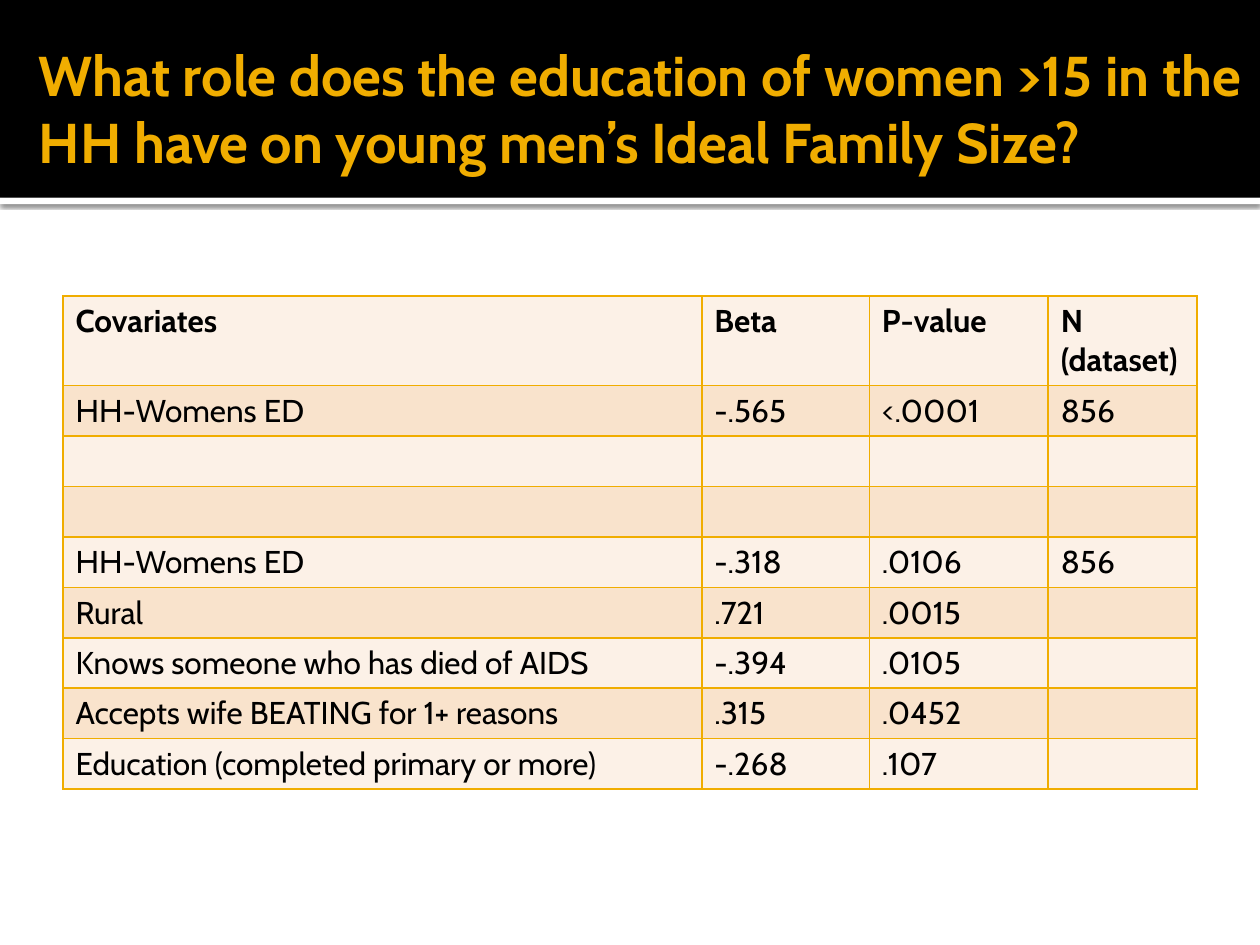
from typing import NamedTuple

from lxml import etree
from pptx import Presentation
from pptx.dml.color import RGBColor
from pptx.enum.shapes import MSO_SHAPE
from pptx.enum.text import MSO_ANCHOR
from pptx.oxml.ns import qn
from pptx.util import Inches, Pt

RECTANGLE = MSO_SHAPE.RECTANGLE
MIDDLE = MSO_ANCHOR.MIDDLE

BLACK = RGBColor(0x00, 0x00, 0x00)
WHITE = RGBColor(0xFF, 0xFF, 0xFF)
GOLD = RGBColor(0xF0, 0xAD, 0x00)
LIGHT_BAND = RGBColor(0xFC, 0xF1, 0xE7)
DARK_BAND = RGBColor(0xF9, 0xE3, 0xCC)

FONT = "Cabin"
TITLE = "What role does the education of women >15 in the HH have on young men’s Ideal Family Size?"
COLUMN_WIDTHS = (5.07, 1.33, 1.42, 1.18)
HEADER_HEIGHT = 0.71
ROW_HEIGHT = 0.4


class Covariate(NamedTuple):
    name: str = ""
    beta: str = ""
    p_value: str = ""
    count: str = ""


ROWS = (
    Covariate("Covariates", "Beta", "P-value", "N (dataset)"),
    Covariate("HH-Womens ED", "-.565", "<.0001", "856"),
    Covariate(),
    Covariate(),
    Covariate("HH-Womens ED", "-.318", ".0106", "856"),
    Covariate("Rural", ".721", ".0015"),
    Covariate("Knows someone who has died of AIDS", "-.394", ".0105"),
    Covariate("Accepts wife BEATING for 1+ reasons", ".315", ".0452"),
    Covariate("Education (completed primary or more)", "-.268", ".107"),
)


def add_band(slide, top: float, height: float, color: RGBColor):
    shape = slide.shapes.add_shape(RECTANGLE, 0, Inches(top), Inches(10), Inches(height))
    shape.shadow.inherit = False
    shape.fill.solid()
    shape.fill.fore_color.rgb = color
    shape.line.fill.background()
    return shape


def add_shadow(shape) -> None:
    """Cast a soft black shadow straight down."""
    effects = shape._element.spPr.find(qn("a:effectLst"))
    shadow = etree.SubElement(
        effects, qn("a:outerShdw"), blurRad=str(Pt(2.5)), dist=str(Pt(0.8)),
        dir="5400000", algn="t", rotWithShape="0")
    color = etree.SubElement(shadow, qn("a:srgbClr"), val=str(BLACK))
    etree.SubElement(color, qn("a:alpha"), val="60000")


def format_text(text_frame, size: float, color: RGBColor, bold: bool) -> None:
    for paragraph in text_frame.paragraphs:
        for run in paragraph.runs:
            run.font.name = FONT
            run.font.size = Pt(size)
            run.font.color.rgb = color
            run.font.bold = bold


def add_title(slide) -> None:
    box = slide.shapes.add_textbox(Inches(0.21), Inches(0.17), Inches(9.79), Inches(1.37))
    text_frame = box.text_frame
    text_frame.word_wrap = True
    text_frame.vertical_anchor = MIDDLE
    text_frame.margin_right = Inches(0.05)
    text_frame.text = TITLE
    format_text(text_frame, 32, GOLD, True)


def set_borders(cell) -> None:
    properties = cell._tc.get_or_add_tcPr()
    for index, side in enumerate(("a:lnL", "a:lnR", "a:lnT", "a:lnB")):
        line = etree.Element(qn(side), w=str(Pt(1)))
        fill = etree.SubElement(line, qn("a:solidFill"))
        etree.SubElement(fill, qn("a:srgbClr"), val=str(GOLD))
        properties.insert(index, line)


def add_covariate_table(slide) -> None:
    height = HEADER_HEIGHT + ROW_HEIGHT * (len(ROWS) - 1)
    table = slide.shapes.add_table(
        len(ROWS), len(COLUMN_WIDTHS), Inches(0.5), Inches(2.35), Inches(9), Inches(height)).table
    for column, width in zip(table.columns, COLUMN_WIDTHS):
        column.width = Inches(width)
    for row_index, values in enumerate(ROWS):
        is_header = row_index == 0
        table.rows[row_index].height = Inches(HEADER_HEIGHT if is_header else ROW_HEIGHT)
        for column_index, value in enumerate(values):
            cell = table.cell(row_index, column_index)
            cell.fill.solid()
            cell.fill.fore_color.rgb = DARK_BAND if row_index % 2 else LIGHT_BAND
            set_borders(cell)
            if value:
                cell.text_frame.text = value
                format_text(cell.text_frame, 18, BLACK, is_header)


def main() -> None:
    presentation = Presentation()
    presentation.slide_width = Inches(10)
    presentation.slide_height = Inches(7.5)
    slide = presentation.slides.add_slide(presentation.slide_layouts[6])

    # Header: white rule with a shadow, black band, title
    add_shadow(add_band(slide, 1.57, 0.05, WHITE))
    add_band(slide, 0, 1.57, BLACK)
    add_title(slide)

    # Regression results
    add_covariate_table(slide)

    presentation.save("out.pptx")


if __name__ == "__main__":
    main()
